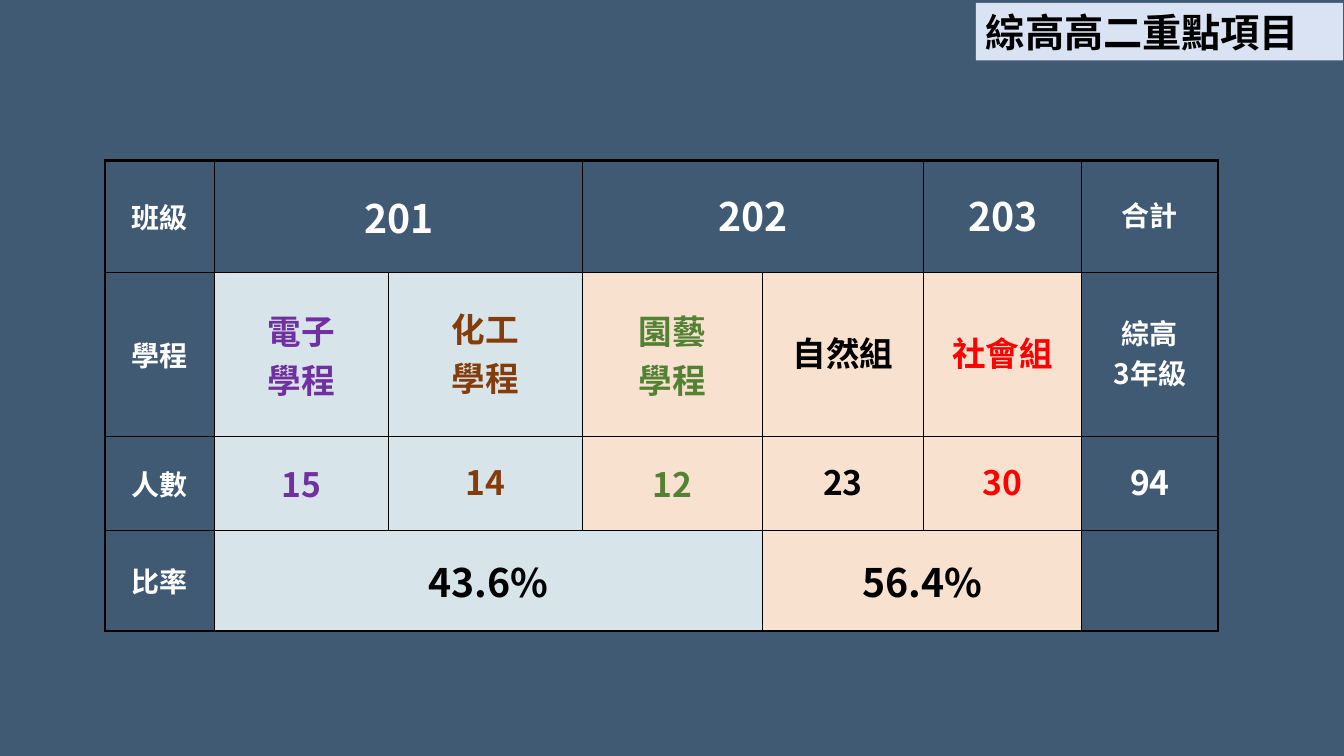
from lxml.etree import SubElement
from pptx import Presentation
from pptx.dml.color import RGBColor
from pptx.enum.shapes import MSO_SHAPE
from pptx.enum.text import MSO_ANCHOR, PP_ALIGN
from pptx.oxml.ns import qn
from pptx.util import Inches, Pt

BLUE, PEACH = "D7E5EB", "F8E2CF"
WHITE, BLACK, RED = "FFFFFF", "000000", "FF0000"
PURPLE, BROWN, GREEN = "7030A0", "843C0B", "548235"


def rgb(value):
    return RGBColor.from_string(value)


class Deck:
    title_font = "Noto Sans CJK SC"
    table_font = "Noto Sans CJK TC"
    thin, thick = 1, 2.25

    def __init__(self):
        self.prs = Presentation()
        self.prs.slide_width = Inches(13.33)
        self.prs.slide_height = Inches(7.5)

    def add_slide(self, color):
        self.s = self.prs.slides.add_slide(self.prs.slide_layouts[6])
        fill = self.s.background.fill
        fill.solid()
        fill.fore_color.rgb = rgb(color)

    def text(self, tf, text, size, color, font, align):
        tf.text = text
        tf.vertical_anchor = MSO_ANCHOR.MIDDLE
        for p in tf.paragraphs:
            p.alignment = align
            p.font.size = Pt(size)
            p.font.bold = True
            p.font.name = font
            p.font.color.rgb = rgb(color)
            # East Asian glyphs take their own typeface
            SubElement(p._p.pPr.find(qn("a:defRPr")), qn("a:ea"), typeface=font)

    def label(self, left, top, width, height, text, size, fill):
        sp = self.s.shapes.add_shape(MSO_SHAPE.RECTANGLE, Inches(left),
                                     Inches(top), Inches(width), Inches(height))
        sp.shadow.inherit = False
        sp.fill.solid()
        sp.fill.fore_color.rgb = rgb(fill)
        sp.line.fill.background()
        self.text(sp.text_frame, text, size, BLACK, self.title_font, PP_ALIGN.LEFT)

    def table(self, left, top, widths, heights):
        frame = self.s.shapes.add_table(
            len(heights), len(widths), Inches(left), Inches(top),
            Inches(sum(widths)), Inches(sum(heights)))
        table = frame.table
        table.first_row = table.horz_banding = False
        for column, width in zip(table.columns, widths):
            column.width = Inches(width)
        for row, height in zip(table.rows, heights):
            row.height = Inches(height)
        # Thick frame outside, thin rules inside
        last_row, last_col = len(heights) - 1, len(widths) - 1
        for i in range(len(heights)):
            for j in range(len(widths)):
                cell = table.cell(i, j)
                self.borders(cell, L=j == 0, R=j == last_col,
                             T=i == 0, B=i == last_row)
                cell.fill.background()
        return table

    def borders(self, cell, **sides):
        tcPr = cell._tc.get_or_add_tcPr()
        for side, outer in sides.items():
            width = Pt(self.thick if outer else self.thin)
            ln = SubElement(tcPr, qn(f"a:ln{side}"), w=str(width))
            SubElement(SubElement(ln, qn("a:solidFill")), qn("a:srgbClr"), val=BLACK)

    def cell(self, table, row, col, text, size, color, fill=None, span=1, tight=False):
        cell = table.cell(row, col)
        if span > 1:
            cell.merge(table.cell(row, col + span - 1))
        if fill:
            cell.fill.solid()
            cell.fill.fore_color.rgb = rgb(fill)
        cell.vertical_anchor = MSO_ANCHOR.MIDDLE
        cell.margin_left = cell.margin_right = Inches(0.01 if tight else 0.1)
        cell.margin_top = Inches(0.01 if tight else 0.05)
        cell.margin_bottom = Inches(0.05)
        tf = cell.text_frame
        tf.text = text
        for p in tf.paragraphs:
            p.alignment = PP_ALIGN.CENTER
        self.text(tf, text, size, color, self.table_font, PP_ALIGN.CENTER)


def main():
    deck = Deck()
    deck.add_slide("405A74")

    # Class table
    table = deck.table(1.04, 1.59, [1.09, 1.72, 1.93, 1.78, 1.6, 1.57, 1.35],
                       [1.11, 1.63, 0.93, 1])

    # Row headings
    for row, heading in enumerate(["班級", "學程", "人數", "比率"]):
        deck.cell(table, row, 0, heading, 20, WHITE)

    # Classes: column, name, columns spanned, tight margins
    for col, name, span, tight in [(1, "201", 2, False), (3, "202", 2, True),
                                   (5, "203", 1, True)]:
        deck.cell(table, 0, col, name, 28, WHITE, span=span, tight=tight)

    # Programmes with their head counts
    programmes = [
        ("電子\n學程", "15", PURPLE, BLUE, False),
        ("化工\n學程", "14", BROWN, BLUE, True),
        ("園藝\n學程", "12", GREEN, PEACH, False),
        ("自然組", "23", BLACK, PEACH, True),
        ("社會組", "30", RED, PEACH, True),
    ]
    for col, (name, count, color, fill, tight) in enumerate(programmes, 1):
        for row, text in ((1, name), (2, count)):
            deck.cell(table, row, col, text, 24, color, fill, tight=tight)

    # Totals
    for row, (text, size) in enumerate([("合計", 20), ("綜高\n3年級", 20), ("94", 24)]):
        deck.cell(table, row, 6, text, size, WHITE, tight=True)

    # Ratios
    deck.cell(table, 3, 1, "43.6%", 28, BLACK, BLUE, span=3)
    deck.cell(table, 3, 4, "56.4%", 28, BLACK, PEACH, span=2)

    # Title tag
    deck.label(9.68, 0.03, 3.64, 0.57, "綜高高二重點項目", 28, "DAE3F3")

    deck.prs.save("out.pptx")


if __name__ == "__main__":
    main()
